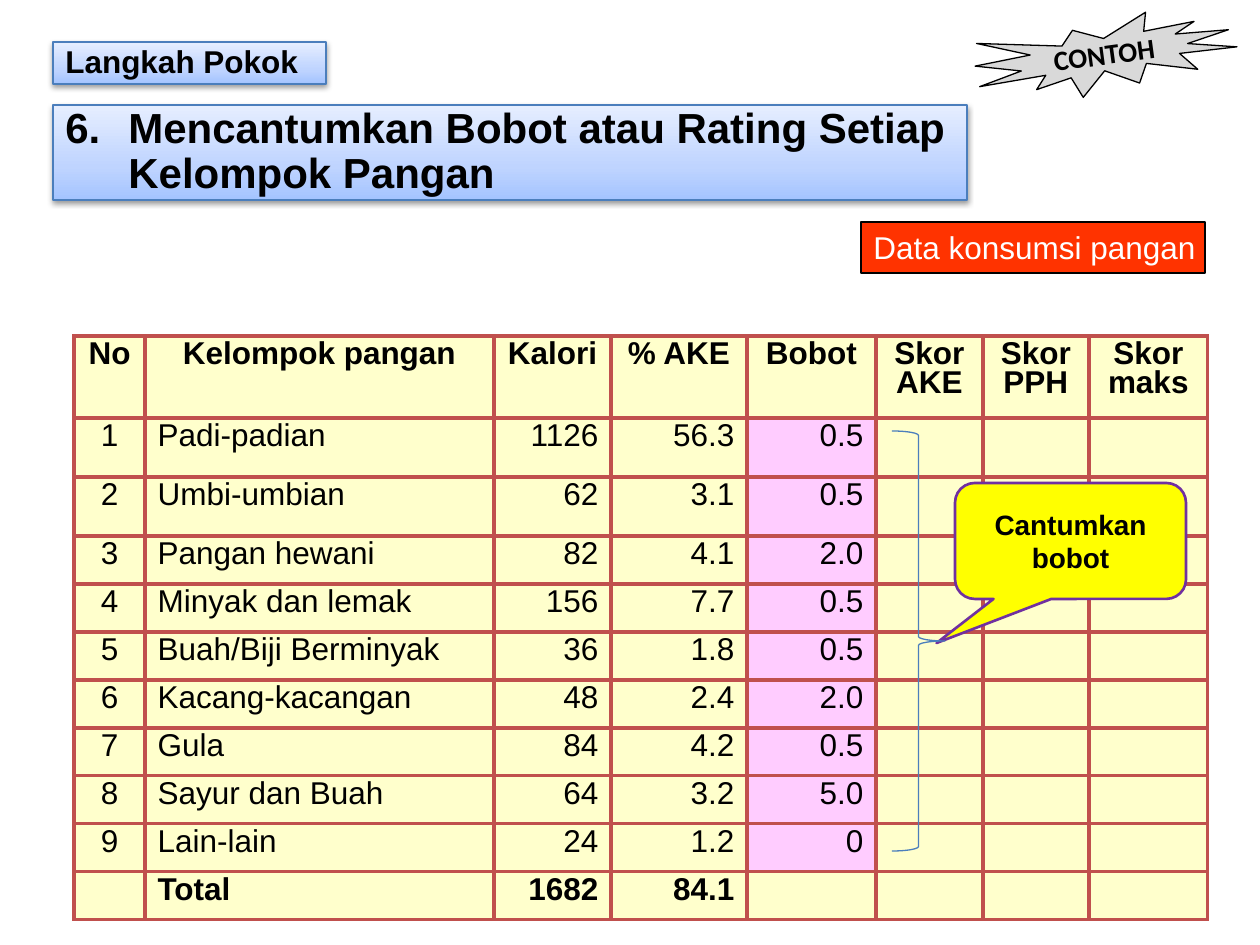
from typing import NamedTuple, Optional

from pptx import Presentation
from pptx.dml.color import RGBColor as Rgb
from pptx.enum.shapes import MSO_SHAPE as Kind
from pptx.enum.text import MSO_ANCHOR as Anchor, PP_ALIGN as Align
from pptx.oxml import parse_xml as to_xml
from pptx.oxml.ns import nsdecls, qn
from pptx.util import Pt

PX = 914400 / 126
HUES = {
    "ink": "000000", "white": "FFFFFF", "cream": "FFFFCC", "pink": "FFCCFF",
    "brick": "C0504D", "red": "FF3300", "yellow": "FFFF00",
    "purple": "7030A0", "blue": "4B7EBC", "gray": "D9D9D9",
}
BLEND = ((0, "A4C4FF"), (35, "BFD4FF"), (100, "E6EEFF"))


class Box(NamedTuple):
    kind: Kind
    at: tuple[int, int, int, int]
    line: str
    fill: Optional[str] = None  # "blend" gives the blue gradient
    text: str = ""
    size: int = 18
    bold: bool = True
    ink: str = "ink"
    face: str = "Arial"
    align: Align = Align.CENTER
    anchor: Anchor = Anchor.MIDDLE
    wrap: bool = True
    width: float = 0.75
    turn: float = 0
    adj: tuple[float, ...] = ()


BANNER = {"kind": Kind.RECTANGLE, "line": "blue", "fill": "blend",
          "align": Align.LEFT}
BOXES = [
    Box(Kind.RECTANGLE, (861, 222, 344, 51), "ink", "red",
        "Data konsumsi pangan", bold=False, ink="white", align=Align.LEFT,
        anchor=Anchor.TOP, wrap=False),
    Box(at=(53, 105, 914, 95), size=24,
        text="6.\tMencantumkan Bobot atau Rating Setiap Kelompok Pangan",
        **BANNER),
    Box(Kind.ROUNDED_RECTANGULAR_CALLOUT, (955, 483, 231, 116), "purple",
        "yellow", "Cantumkan bobot", size=16, width=1.5,
        adj=(-0.58, 0.88, 0.17)),
    Box(Kind.RIGHT_BRACE, (892, 431, 53, 420), "blue"),
    Box(at=(53, 42, 273, 42), text="Langkah Pokok", **BANNER),
    Box(Kind.EXPLOSION1, (975, 18, 262, 76), "ink", "gray", "CONTOH",
        size=16, face="Calibri", wrap=False, turn=352.2),
]

HEADS = ["No", "Kelompok pangan", "Kalori", "% AKE", "Bobot",
         "Skor AKE", "Skor PPH", "Skor maks"]
FOODS = [
    ("Padi-padian", "1126", "56.3", "0.5"),
    ("Umbi-umbian", "62", "3.1", "0.5"),
    ("Pangan hewani", "82", "4.1", "2.0"),
    ("Minyak dan lemak", "156", "7.7", "0.5"),
    ("Buah/Biji Berminyak", "36", "1.8", "0.5"),
    ("Kacang-kacangan", "48", "2.4", "2.0"),
    ("Gula", "84", "4.2", "0.5"),
    ("Sayur dan Buah", "64", "3.2", "5.0"),
    ("Lain-lain", "24", "1.2", "0"),
]
TOTAL = ["", "Total", "1682", "84.1"]
COLS = [71, 349, 117, 136, 129, 107, 106, 119]
ROWS = [82, 59, 59] + [48] * 8
SIDES = [Align.CENTER, Align.LEFT] + [Align.RIGHT] * 6


def px(num: float) -> int:
    return round(num * PX)


def hue(name: str) -> Rgb:
    return Rgb.from_string(HUES[name])


def style(para, size: int, bold: bool, ink: str, face: str) -> None:
    font = para.font
    font.size, font.bold, font.name = Pt(size), bold, face
    font.color.rgb = hue(ink)


def blend(shape) -> None:
    """Fill with the upward blue gradient and cast a soft shadow."""
    stops = "".join(f'<a:gs pos="{pos * 1000}"><a:srgbClr val="{val}"/></a:gs>'
                    for pos, val in BLEND)
    shape.fill.background()
    props = shape._element.spPr
    props.replace(props.find(qn("a:noFill")), to_xml(
        f'<a:gradFill {nsdecls("a")} rotWithShape="1"><a:gsLst>{stops}'
        '</a:gsLst><a:lin ang="16200000" scaled="0"/></a:gradFill>'))
    props.find(qn("a:effectLst")).append(to_xml(
        f'<a:outerShdw {nsdecls("a")} blurRad="40000" dist="20000" '
        'dir="5400000" rotWithShape="0"><a:srgbClr val="000000">'
        '<a:alpha val="38000"/></a:srgbClr></a:outerShdw>'))


def draw(slide, box: Box) -> None:
    shape = slide.shapes.add_shape(box.kind, *map(px, box.at))
    shape.shadow.inherit = False
    shape.rotation = box.turn
    for i, val in enumerate(box.adj):
        shape.adjustments[i] = val
    shape.line.color.rgb = hue(box.line)
    shape.line.width = Pt(box.width)
    if box.fill == "blend":
        blend(shape)
    elif box.fill:
        shape.fill.solid()
        shape.fill.fore_color.rgb = hue(box.fill)
    else:
        shape.fill.background()
    if not box.text:
        return
    frame = shape.text_frame
    frame.word_wrap, frame.vertical_anchor = box.wrap, box.anchor
    para = frame.paragraphs[0]
    para.text, para.alignment = box.text, box.align
    if box.fill == "blend":
        para.line_spacing = 0.9
        props = para._p.get_or_add_pPr()
        props.set("marL", str(px(63)))
        props.set("indent", str(px(-63)))
    style(para, box.size, box.bold, box.ink, box.face)


def edge(cell) -> None:
    props = cell._tc.get_or_add_tcPr()
    for i, side in enumerate(("lnL", "lnR", "lnT", "lnB")):
        props.insert(i, to_xml(
            f'<a:{side} {nsdecls("a")} w="{Pt(2.25)}"><a:solidFill>'
            f'<a:srgbClr val="{HUES["brick"]}"/></a:solidFill></a:{side}>'))


def grid(slide) -> None:
    data = [HEADS, *([str(n), *food] for n, food in enumerate(FOODS, 1)), TOTAL]
    last = len(data) - 1
    table = slide.shapes.add_table(
        len(ROWS), len(COLS), px(74), px(336),
        px(sum(COLS)), px(sum(ROWS))).table
    for col, wide in zip(table.columns, COLS):
        col.width = px(wide)
    for r, (row, high) in enumerate(zip(table.rows, ROWS)):
        row.height = px(high)
        for c, cell in enumerate(row.cells):
            para = cell.text_frame.paragraphs[0]
            if c < len(data[r]):
                para.text = data[r][c]
            para.alignment = Align.CENTER if r == 0 else SIDES[c]
            para.line_spacing = 0.8
            style(para, 18, r in (0, last), "ink", "Arial")
            cell.fill.solid()
            pink = c == 4 and 0 < r < last
            cell.fill.fore_color.rgb = hue("pink" if pink else "cream")
            edge(cell)


def main() -> None:
    deck = Presentation()
    deck.slide_width, deck.slide_height = px(1260), px(945)
    slide = deck.slides.add_slide(deck.slide_layouts[6])
    # Food table, then the labels and marks over it
    grid(slide)
    for box in BOXES:
        draw(slide, box)
    deck.save("out.pptx")


if __name__ == "__main__":
    main()
